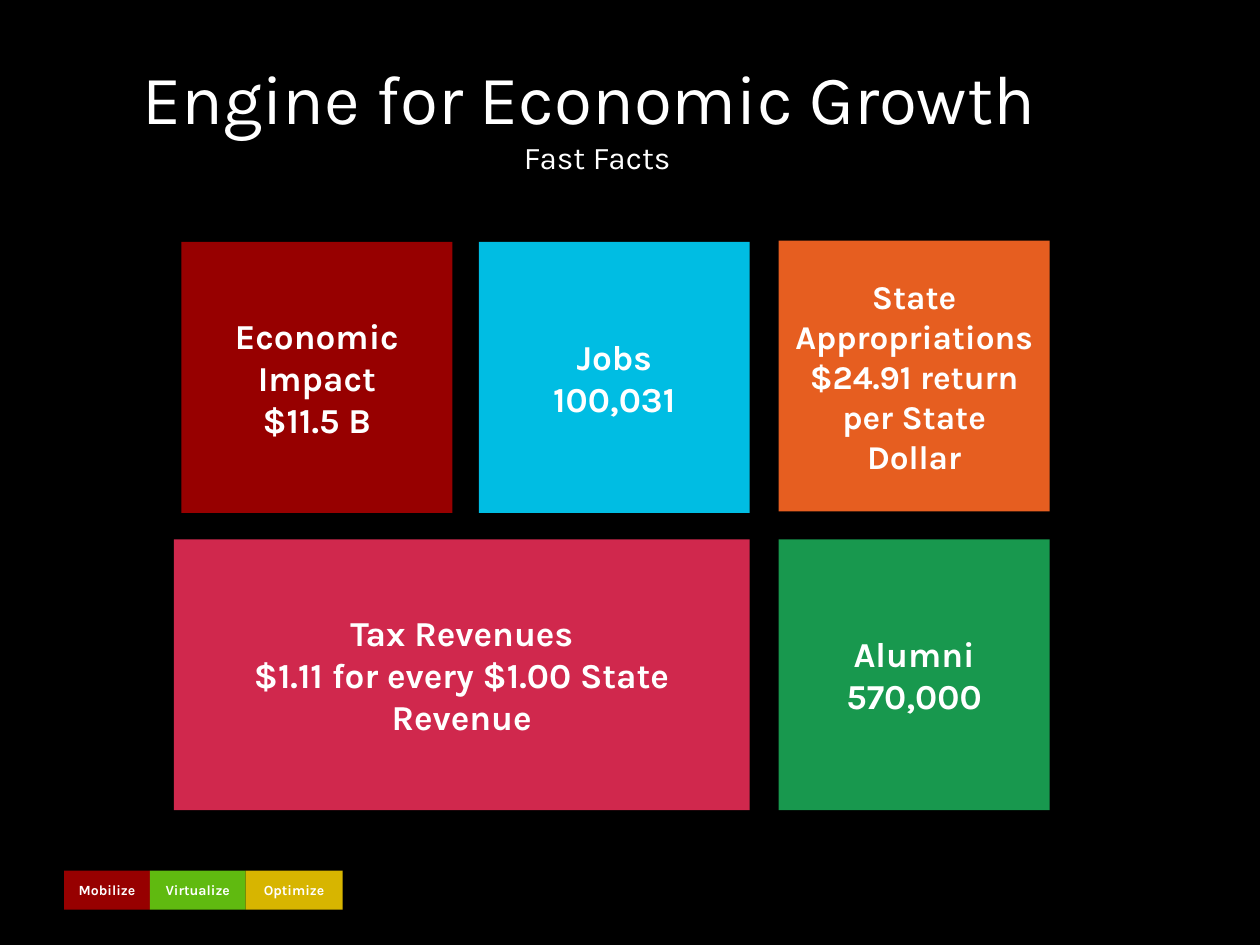
from pptx import Presentation
from pptx.dml.color import RGBColor
from pptx.enum.shapes import MSO_SHAPE
from pptx.enum.text import MSO_ANCHOR, PP_ALIGN
from pptx.util import Inches, Pt

HUES = {"black": "000000", "white": "FFFFFF", "red": "970000", "blue": "00BDE3",
        "orange": "E65E20", "pink": "D0284D", "green": "18984E",
        "lime": "60BA10", "gold": "D7B500"}
FONT = "Karla"


def color(name):
    """Return the named colour."""
    return RGBColor.from_string(HUES[name])


def style(run, size, bold=False):
    """Format a run in white."""
    run.font.name = FONT
    run.font.size = Pt(size)
    run.font.bold = bold
    run.font.color.rgb = color("white")


def add_tile(slide, box, hue, text, size):
    """Add a filled rectangle with centred bold text."""
    tile = slide.shapes.add_shape(MSO_SHAPE.RECTANGLE, *map(Inches, box))
    tile.shadow.inherit = False
    tile.fill.solid()
    tile.fill.fore_color.rgb = color(hue)
    tile.line.fill.background()
    frame = tile.text_frame
    frame.text = text
    frame.word_wrap = True
    frame.vertical_anchor = MSO_ANCHOR.MIDDLE
    for para in frame.paragraphs:
        para.alignment = PP_ALIGN.CENTER
        for run in para.runs:
            style(run, size, True)


def add_title(slide, box):
    """Add the title with its smaller second line."""
    frame = slide.shapes.add_textbox(*map(Inches, box)).text_frame
    frame.word_wrap = True
    frame.vertical_anchor = MSO_ANCHOR.MIDDLE
    para = frame.paragraphs[0]
    para.text = "Engine for Economic Growth \vFast Facts"
    para.alignment = PP_ALIGN.CENTER
    for run, size in zip(para.runs, (39.6, 18)):
        style(run, size)


def add_facts(slide, left, top):
    """Add the fact tiles in two rows."""
    side = 2.15
    low = 2.36
    facts = [
        (0.06, 0.01, side, "red", "Economic Impact\n$11.5 B", 20),
        (2.42, 0.01, side, "blue", "Jobs\n100,031", 20),
        (4.8, 0, side, "orange",
         "State Appropriations\n$24.91 return\nper State Dollar", 19),
        (0, low + 0.01, 4.57, "pink",
         "Tax Revenues\n$1.11 for every $1.00 State Revenue", 20),
        (4.8, low + 0.01, side, "green", "Alumni\n570,000", 20),
    ]
    for x, y, wide, hue, text, size in facts:
        add_tile(slide, (left + x, top + y, wide, side), hue, text, size)


def add_strip(slide, left, top, high):
    """Add the row of labels at the foot."""
    parts = [("Mobilize", "red", 0.68), ("Virtualize", "lime", 0.76),
             ("Optimize", "gold", 0.77)]
    for text, hue, wide in parts:
        add_tile(slide, (left, top, wide, high), hue, text, 8)
        left += wide


def main():
    """Build and save the slide."""
    deck = Presentation()
    deck.slide_width = Inches(10)
    deck.slide_height = Inches(7.5)
    slide = deck.slides.add_slide(deck.slide_layouts[6])
    slide.background.fill.solid()
    slide.background.fill.fore_color.rgb = color("black")
    add_strip(slide, 0.51, 6.91, 0.31)
    add_title(slide, (0.85, 0.29, 7.78, 1.25))
    add_facts(slide, 1.38, 1.91)
    deck.save("out.pptx")


if __name__ == "__main__":
    main()
